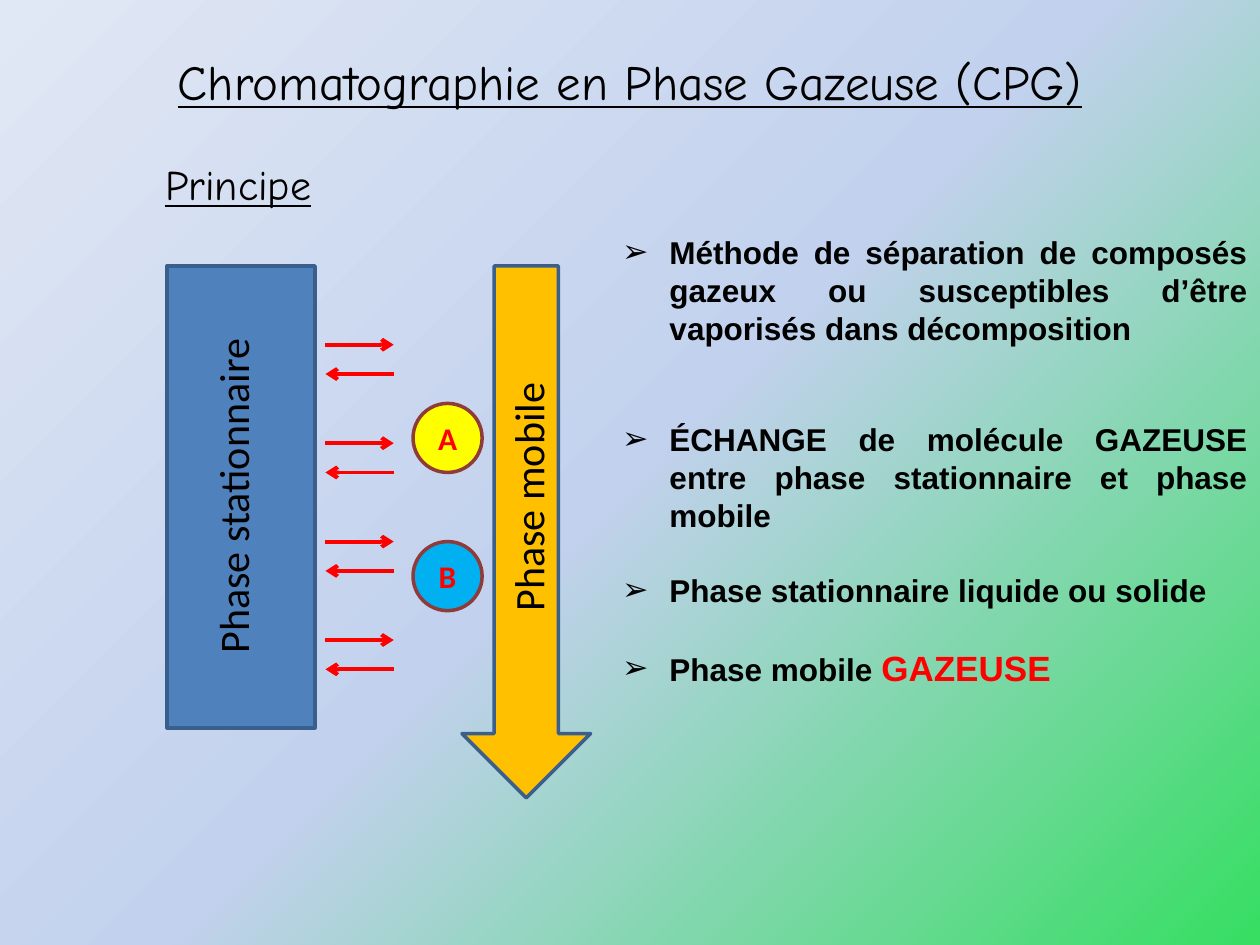
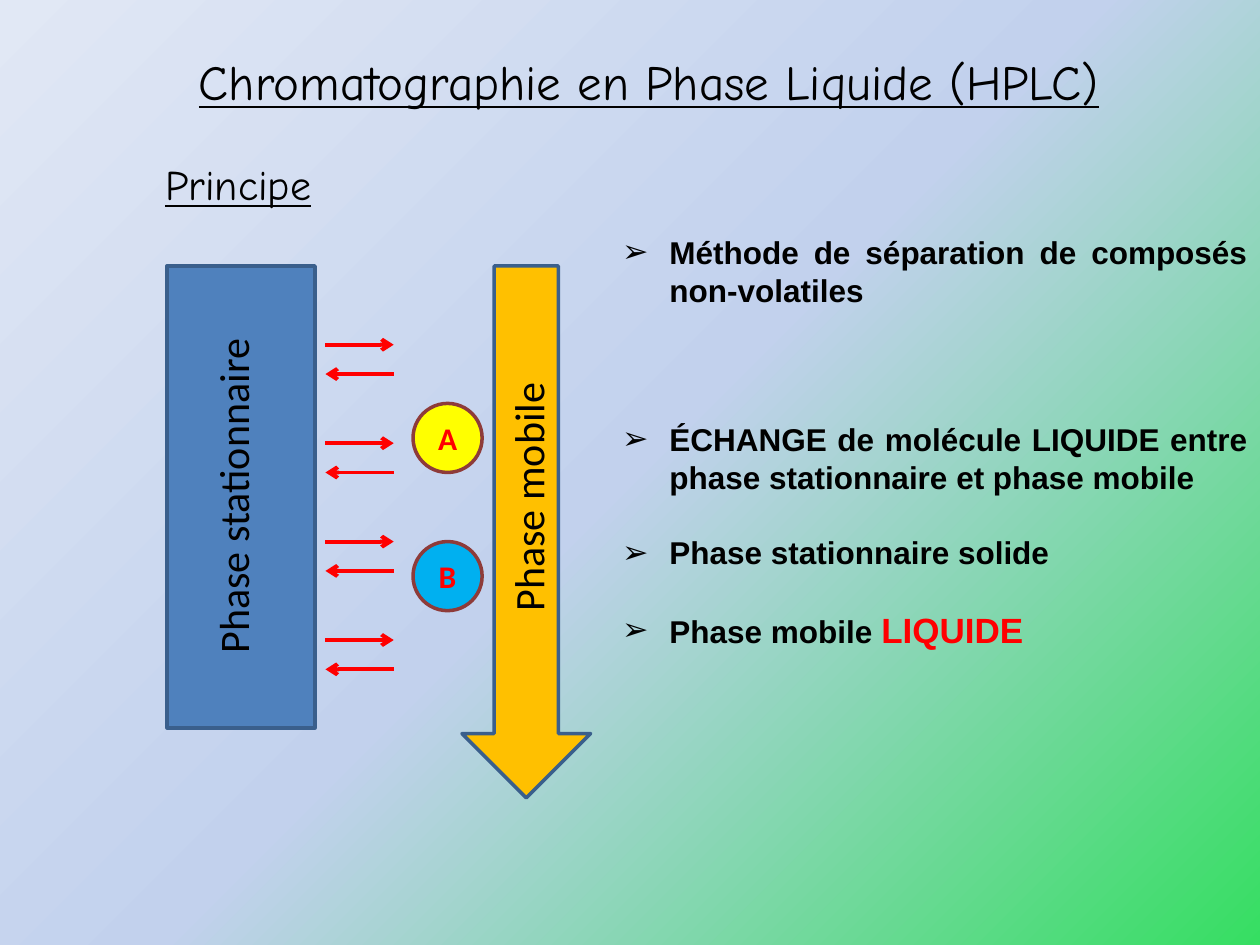
from lxml import etree
from pptx import Presentation
from pptx.dml.color import RGBColor
from pptx.enum import shapes, text
from pptx.oxml import ns, parse_xml
from pptx.util import Pt

COLORS = {
    "ink": "000000", "red": "FF0000",
    "stationary": "4F81BD", "mobile": "FFC000", "phase edge": "3A5F8C",
    "A": "FFFF00", "B": "00B0F0", "molecule edge": "8E3B39",
    "green": "36DE62", "mid blue": "C2D1ED", "pale blue": "E1E8F5",
}
HEADING_FONT, LABEL_FONT, BODY_FONT = "Comic Neue", "Calibri", "Arial"
BULLET_INDENT = Pt(27)
BLANK_LINE = 21.5

METHODS = [
    {"title": "Chromatographie en Phase Gazeuse (CPG)", "title_width": 558.7,
     "definition": "Méthode de séparation de composés gazeux ou susceptibles "
                   "d’être vaporisés dans décomposition",
     "definition_height": 97, "facts_height": 184,
     "stationary": "Phase stationnaire liquide ou solide", "state": "GAZEUSE"},
    {"title": "Chromatographie en Phase Liquide (HPLC)", "title_width": 580.3,
     "definition": "Méthode de séparation de composés non-volatiles",
     "definition_height": 51, "facts_height": 163,
     "stationary": "Phase stationnaire solide", "state": "LIQUIDE"},
]


def text_box(slide, left, top, width, height, wrap=False, rotation=0):
    box = slide.shapes.add_textbox(Pt(left), Pt(top), Pt(width), Pt(height))
    box.rotation = rotation
    box.text_frame.word_wrap = wrap
    box.text_frame.auto_size = text.MSO_AUTO_SIZE.SHAPE_TO_FIT_TEXT
    return box.text_frame


def write(frame, words, font=BODY_FONT, size=18, color="ink", bold=False,
          underline=False, bullet=False, before=0, same_line=False):
    """Add words as a paragraph, or to the last paragraph if same_line."""
    paragraph = frame.paragraphs[-1]
    if paragraph.runs and not same_line:
        paragraph = frame.add_paragraph()
    if not same_line:
        paragraph.alignment = text.PP_ALIGN.JUSTIFY if bullet else text.PP_ALIGN.CENTER
        if before:
            paragraph.space_before = Pt(before)
    if bullet:
        properties = paragraph._p.get_or_add_pPr()
        properties.set("marL", str(BULLET_INDENT))
        properties.set("indent", str(-BULLET_INDENT))
        etree.SubElement(properties, ns.qn("a:buFont")).set("typeface", BODY_FONT)
        etree.SubElement(properties, ns.qn("a:buChar")).set("char", "➢")
    run = paragraph.add_run()
    run.text = words
    run.font.name, run.font.size = font, Pt(size)
    run.font.bold, run.font.underline = bold, underline
    run.font.color.rgb = RGBColor.from_string(COLORS[color])


prs = Presentation()
prs.slide_width, prs.slide_height = Pt(720), Pt(540)

# Radial background shared by all slides, centred on the bottom right corner
backdrop = prs.slide_master.background
backdrop.fill.gradient()
gradient = backdrop._cSld.find(".//" + ns.qn("a:gradFill"))
stops = "".join(
    f'<a:gs pos="{position}"><a:srgbClr val="{COLORS[name]}"/></a:gs>'
    for position, name in ((0, "green"), (50000, "mid blue"), (100000, "pale blue")))
gradient.getparent().replace(gradient, parse_xml(
    f'<a:gradFill {ns.nsdecls("a")} rotWithShape="1"><a:gsLst>{stops}</a:gsLst>'
    '<a:path path="circle"><a:fillToRect l="100000" t="100000"/></a:path></a:gradFill>'))

SHAPE = shapes.MSO_SHAPE
for method in METHODS:
    slide = prs.slides.add_slide(prs.slide_layouts[6])

    write(text_box(slide, 80.6, 26, method["title_width"], 41), method["title"],
          font=HEADING_FONT, size=28, underline=True)
    write(text_box(slide, 84.3, 87, 103.7, 37), "Principe",
          font=HEADING_FONT, size=24, underline=True)

    # Phases and the molecules that move between them
    for kind, left, top, width, height, fill, edge, letter in (
            (SHAPE.DOWN_ARROW, 264, 152, 73.5, 304, "mobile", "phase edge", ""),
            (SHAPE.RECTANGLE, 95.5, 152, 84.5, 264, "stationary", "phase edge", ""),
            (SHAPE.OVAL, 236, 230.5, 39.5, 39.5, "A", "molecule edge", "A"),
            (SHAPE.OVAL, 236, 309.5, 39.5, 39.5, "B", "molecule edge", "B")):
        part = slide.shapes.add_shape(kind, Pt(left), Pt(top), Pt(width), Pt(height))
        part.shadow.inherit = False
        part.fill.solid()
        part.fill.fore_color.rgb = RGBColor.from_string(COLORS[fill])
        part.line.color.rgb = RGBColor.from_string(COLORS[edge])
        part.line.width = Pt(2)
        if letter:
            part.text_frame.vertical_anchor = text.MSO_ANCHOR.MIDDLE
            write(part.text_frame, letter, font=LABEL_FONT, color="red", bold=True)

    for label, left, top, width in (("Phase stationnaire", 35.3, 265, 196),
                                    ("Phase mobile", 229, 265.5, 146)):
        write(text_box(slide, left, top, width, 37, rotation=270), label,
              font=LABEL_FONT, size=24)

    # Four pairs of exchange arrows, out and back
    for pair in range(4):
        exchange = slide.shapes.add_group_shape()
        out_y = 197 + 56.25 * pair
        for start, end, y in ((186, 225, out_y), (225, 186, out_y + 16.75)):
            arrow = exchange.shapes.add_connector(
                shapes.MSO_CONNECTOR.STRAIGHT, Pt(start), Pt(y), Pt(end), Pt(y))
            arrow.line.color.rgb = RGBColor.from_string(COLORS["red"])
            arrow.line.width = Pt(2.25)
            etree.SubElement(arrow.line._get_or_add_ln(),
                             ns.qn("a:tailEnd")).set("type", "arrow")
            etree.SubElement(arrow._element.spPr, ns.qn("a:effectLst"))

    definition = text_box(slide, 348.5, 129.6, 371.5, method["definition_height"], wrap=True)
    write(definition, method["definition"], bold=True, bullet=True)

    facts = text_box(slide, 348.5, 236.5, 371.5, method["facts_height"], wrap=True)
    write(facts, f"ÉCHANGE de molécule {method['state']} entre phase stationnaire "
                 "et phase mobile", bold=True, bullet=True)
    write(facts, method["stationary"], bold=True, bullet=True, before=BLANK_LINE)
    write(facts, "Phase mobile ", bold=True, bullet=True, before=BLANK_LINE)
    write(facts, method["state"], size=20, color="red", bold=True, same_line=True)

prs.save("out.pptx")
